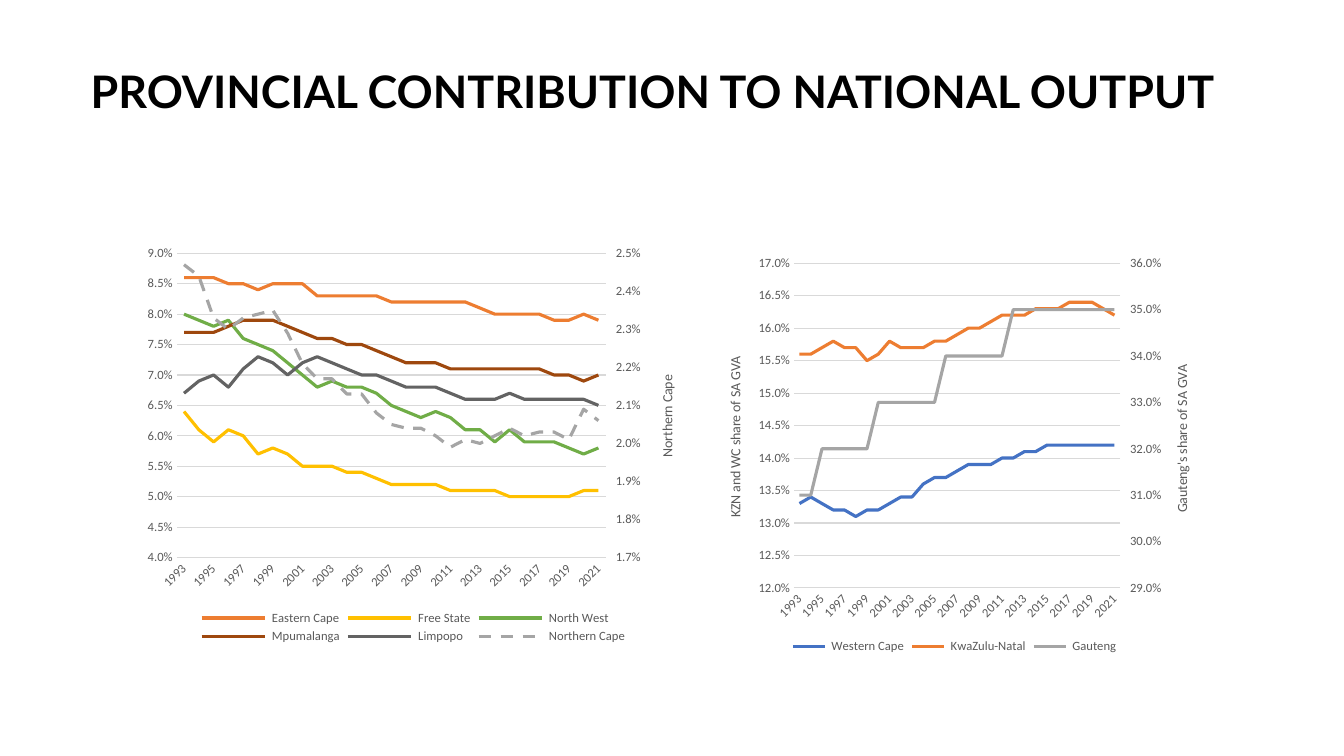
import copy

import pptx
import pptx.chart.axis
import pptx.chart.data
import pptx.dml.color
import pptx.enum.chart
import pptx.enum.dml
import pptx.enum.shapes
import pptx.enum.text
import pptx.oxml
import pptx.oxml.ns
import pptx.util

RGBColor = pptx.dml.color.RGBColor
WHITE = RGBColor(0xFF, 0xFF, 0xFF)
BLACK = RGBColor(0x00, 0x00, 0x00)
LABEL = RGBColor(0x59, 0x59, 0x59)
RULE = RGBColor(0xD9, 0xD9, 0xD9)
ORANGE = RGBColor(0xED, 0x7D, 0x31)
YELLOW = RGBColor(0xFF, 0xC0, 0x00)
GREEN = RGBColor(0x70, 0xAD, 0x47)
BROWN = RGBColor(0x9E, 0x48, 0x0E)
DARK_GRAY = RGBColor(0x63, 0x63, 0x63)
LIGHT_GRAY = RGBColor(0xA5, 0xA5, 0xA5)
BLUE = RGBColor(0x44, 0x72, 0xC4)

YEARS = [str(year) for year in range(1993, 2022)]
SMALL_PROVINCES = [
    (" Eastern Cape", ORANGE, [86, 86, 86, 85, 85, 84, 85, 85, 85, 83, 83, 83, 83, 83, 82,
                               82, 82, 82, 82, 82, 81, 80, 80, 80, 80, 79, 79, 80, 79]),
    (" Free State", YELLOW, [64, 61, 59, 61, 60, 57, 58, 57, 55, 55, 55, 54, 54, 53, 52,
                             52, 52, 52, 51, 51, 51, 51, 50, 50, 50, 50, 50, 51, 51]),
    (" North West", GREEN, [80, 79, 78, 79, 76, 75, 74, 72, 70, 68, 69, 68, 68, 67, 65,
                            64, 63, 64, 63, 61, 61, 59, 61, 59, 59, 59, 58, 57, 58]),
    (" Mpumalanga", BROWN, [77, 77, 77, 78, 79, 79, 79, 78, 77, 76, 76, 75, 75, 74, 73,
                            72, 72, 72, 71, 71, 71, 71, 71, 71, 71, 70, 70, 69, 70]),
    (" Limpopo", DARK_GRAY, [67, 69, 70, 68, 71, 73, 72, 70, 72, 73, 72, 71, 70, 70, 69,
                             68, 68, 68, 67, 66, 66, 66, 67, 66, 66, 66, 66, 66, 65]),
    (" Northern Cape", LIGHT_GRAY, [24.7, 24.4, 23.3, 23, 23.3, 23.4, 23.5, 22.9, 22.1, 21.7,
                                    21.7, 21.3, 21.3, 20.8, 20.5, 20.4, 20.4, 20.2, 19.9, 20.1,
                                    20, 20.2, 20.4, 20.2, 20.3, 20.3, 20.1, 20.9, 20.6]),
]
LARGE_PROVINCES = [
    (" Western Cape", BLUE, [133, 134, 133, 132, 132, 131, 132, 132, 133, 134, 134, 136, 137, 137, 138,
                             139, 139, 139, 140, 140, 141, 141, 142, 142, 142, 142, 142, 142, 142]),
    (" KwaZulu-Natal", ORANGE, [156, 156, 157, 158, 157, 157, 155, 156, 158, 157, 157, 157, 158, 158, 159,
                                160, 160, 161, 162, 162, 162, 163, 163, 163, 164, 164, 164, 163, 162]),
    (" Gauteng", LIGHT_GRAY, [310] * 2 + [320] * 5 + [330] * 6 + [340] * 6 + [350] * 10),
]


class OutputSlide:
    """Holds the style and the current slide, and draws its elements."""

    def __init__(self, slide):
        self.slide = slide
        self.chart_font = "Calibri"
        self.title_font = "Lato"

    def banner(self, *box):
        shape = self.slide.shapes.add_shape(
            pptx.enum.shapes.MSO_SHAPE.RECTANGLE, *map(pptx.util.Cm, box))
        shape.shadow.inherit = False
        shape.fill.solid()
        shape.fill.fore_color.rgb = WHITE
        shape.line.fill.background()

    def title(self, text, *box):
        frame = self.slide.shapes.add_textbox(*map(pptx.util.Cm, box)).text_frame
        frame.word_wrap = True
        frame.vertical_anchor = pptx.enum.text.MSO_ANCHOR.MIDDLE
        paragraph = frame.paragraphs[0]
        paragraph.text = text
        paragraph.alignment = pptx.enum.text.PP_ALIGN.CENTER
        paragraph.line_spacing = 0.9
        self.style_font(paragraph.font, 32, BLACK, self.title_font)
        paragraph.font.bold = True

    def style_font(self, font, size, color, name):
        font.name, font.size, font.bold = name, pptx.util.Pt(size), False
        font.color.rgb = color

    def element(self, tag, **attributes):
        node = pptx.oxml.parse_xml(f"<c:{tag} {pptx.oxml.ns.nsdecls('c')}/>")
        for key, value in attributes.items():
            node.set(key, str(value))
        return node

    def place(self, parent, index, **fractions):
        for old in parent.findall(pptx.oxml.ns.qn("c:layout")):
            parent.remove(old)
        layout, manual = self.element("layout"), self.element("manualLayout")
        if "w" in fractions:
            manual.append(self.element("layoutTarget", val="inner"))
        for mode in ("xMode", "yMode"):
            manual.append(self.element(mode, val="edge"))
        for key, value in fractions.items():
            manual.append(self.element(key, val=value))
        layout.append(manual)
        parent.insert(index, layout)

    def value_axis(self, axis, scale, tick, title):
        axis.minimum_scale, axis.maximum_scale, axis.major_unit = scale
        axis.major_tick_mark = tick
        axis.minor_tick_mark = pptx.enum.chart.XL_TICK_MARK.NONE
        axis.tick_labels.number_format = "0.0%"
        axis.tick_labels.number_format_is_linked = False
        self.style_font(axis.tick_labels.font, 9, LABEL, self.chart_font)
        axis.format.line.fill.background()
        if title:
            text, x, y = title
            frame = axis.axis_title.text_frame
            frame.text = text
            self.style_font(frame.paragraphs[0].font, 10, LABEL, self.chart_font)
            body = frame._txBody.bodyPr
            body.set("rot", "-5400000")
            body.set("vert", "horz")
            self.place(axis.axis_title._element, 1, x=x, y=y)

    def category_axis(self, axis):
        none = pptx.enum.chart.XL_TICK_MARK.NONE
        axis.major_tick_mark = axis.minor_tick_mark = none
        axis.format.line.color.rgb = RULE
        axis.format.line.width = pptx.util.Pt(0.75)
        self.style_font(axis.tick_labels.font, 9, LABEL, self.chart_font)
        qn = pptx.oxml.ns.qn
        axis._element.find(qn("c:txPr")).find(qn("a:bodyPr")).set("rot", "-2700000")
        axis._element.find(qn("c:noMultiLvlLbl")).addprevious(self.element("tickLblSkip", val=2))

    def split_last_series(self, chart):
        qn = pptx.oxml.ns.qn
        plot_area = chart._chartSpace.chart.plotArea
        left_plot = plot_area.find(qn("c:lineChart"))
        left_values, categories = chart.value_axis._element, chart.category_axis._element
        if left_values.find(qn("c:crossBetween")) is None:
            left_values.find(qn("c:crosses")).addnext(self.element("crossBetween", val="between"))
        right_plot = copy.deepcopy(left_plot)
        all_series = left_plot.findall(qn("c:ser"))
        left_plot.remove(all_series[-1])
        for series in right_plot.findall(qn("c:ser"))[:-1]:
            right_plot.remove(series)
        left_plot.addnext(right_plot)
        right_values, hidden = copy.deepcopy(left_values), copy.deepcopy(categories)
        left_values.addnext(right_values)
        right_values.addnext(hidden)
        for axis, own, other in ((hidden, "5001", "5002"), (right_values, "5002", "5001")):
            axis.find(qn("c:axId")).set("val", own)
            axis.find(qn("c:crossAx")).set("val", other)
        for node, number in zip(right_plot.findall(qn("c:axId")), ("5001", "5002")):
            node.set("val", number)
        hidden.find(qn("c:delete")).set("val", "1")
        right_values.find(qn("c:axPos")).set("val", "r")
        right_values.find(qn("c:crosses")).set("val", "max")
        return pptx.chart.axis.ValueAxis(right_values)

    def line_chart(self, provinces, box, plot, left_scale, right_scale, right_title,
                   left_title=None, dashed=False):
        data = pptx.chart.data.CategoryChartData(number_format="0.0%")
        data.categories = YEARS
        for name, _, shares in provinces:
            data.add_series(name, [round(share / 1000, 4) for share in shares])
        chart = self.slide.shapes.add_chart(
            pptx.enum.chart.XL_CHART_TYPE.LINE, *map(pptx.util.Cm, box), data).chart
        chart.has_title = False
        self.style_font(chart.font, 10, BLACK, self.chart_font)
        chart.has_legend = True
        chart.legend.position = pptx.enum.chart.XL_LEGEND_POSITION.BOTTOM
        chart.legend.include_in_layout = False
        self.style_font(chart.legend.font, 9, LABEL, self.chart_font)
        chart.plots[0].vary_by_categories = False
        for series, (_, color, _) in zip(chart.plots[0].series, provinces):
            series.smooth = False
            series.marker.style = pptx.enum.chart.XL_MARKER_STYLE.NONE
            series.format.line.color.rgb = color
            series.format.line.width = pptx.util.Pt(2.25)
        if dashed:
            series.format.line.dash_style = pptx.enum.dml.MSO_LINE.DASH
        left_axis = chart.value_axis
        left_axis.has_major_gridlines = False
        right_axis = self.split_last_series(chart)
        ticks = pptx.enum.chart.XL_TICK_MARK
        self.value_axis(left_axis, left_scale, ticks.NONE, left_title)
        self.value_axis(right_axis, right_scale, ticks.OUTSIDE, right_title)
        grid = left_axis.major_gridlines.format.line
        grid.color.rgb, grid.width = RULE, pptx.util.Pt(0.75)
        self.category_axis(chart.category_axis)
        self.place(chart._chartSpace.chart.plotArea, 0, **dict(zip("xywh", plot)))


def main():
    presentation = pptx.Presentation()
    presentation.slide_width = pptx.util.Cm(33.87)
    presentation.slide_height = pptx.util.Cm(19.05)
    output = OutputSlide(presentation.slides.add_slide(presentation.slide_layouts[6]))
    output.banner(0, 0, 33.87, 4.72)
    output.title("PROVINCIAL CONTRIBUTION TO NATIONAL OUTPUT ", 0.84, 0.76, 31.47, 3.23)
    output.line_chart(SMALL_PROVINCES, (3.48, 5.97, 13.87, 10.36), (0.07, 0.04, 0.78, 0.74),
                      (0.04, 0.09, 0.005), (0.017, 0.025, 0.001),
                      ("Northern Cape", 0.94, 0.33), dashed=True)
    output.line_chart(LARGE_PROVINCES, (17.73, 6.22, 12.65, 10.36), (0.18, 0.04, 0.65, 0.79),
                      (0.12, 0.17, 0.005), (0.29, 0.36, 0.01),
                      ("Gauteng's share of SA GVA", 0.93, 0.28),
                      left_title=("KZN and WC share of SA GVA", 0.04, 0.26))
    presentation.save("out.pptx")


if __name__ == "__main__":
    main()
